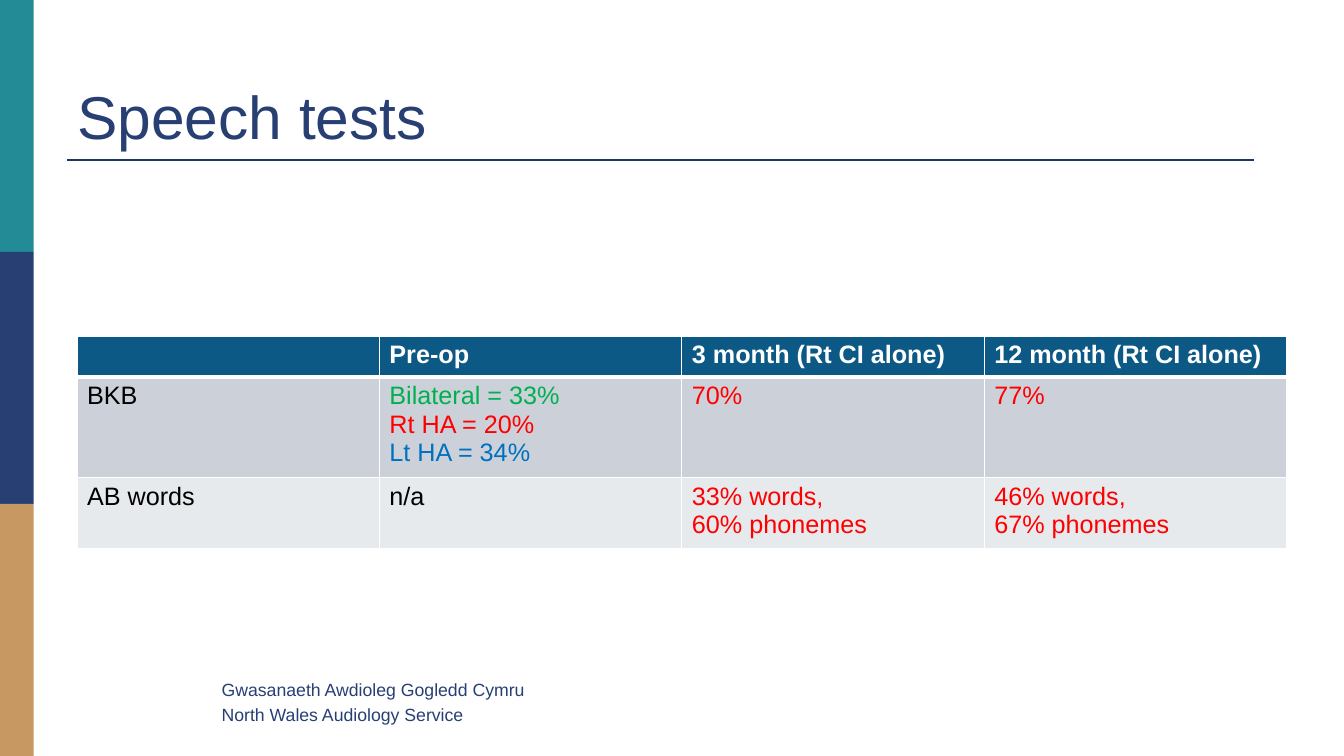
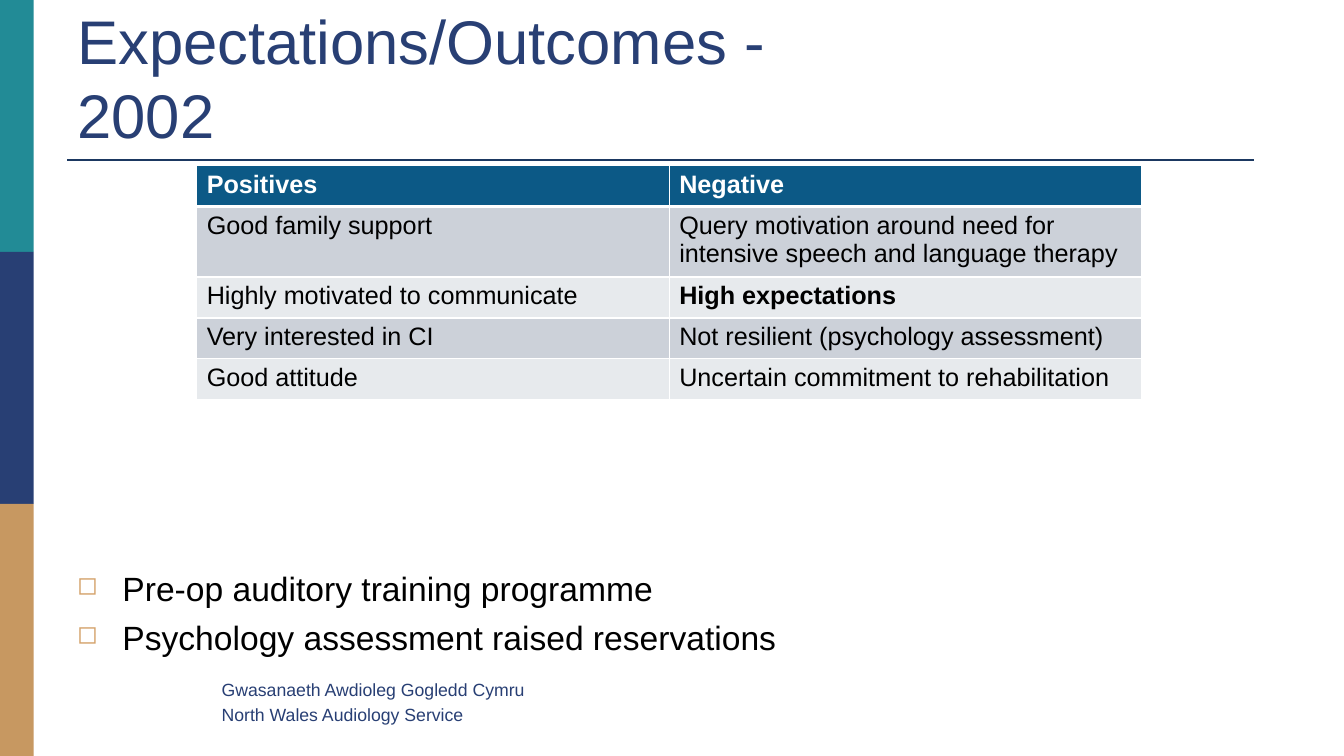
from dataclasses import dataclass

from lxml import etree
from pptx import Presentation
from pptx.dml import color
from pptx.enum import shapes, text
from pptx.oxml import ns
from pptx.util import Pt

FONT = "Arial"
TEAL, NAVY, SAND = "228B96", "283F74", "C79861"
RULE, BULLET = "1B3861", "D4A169"
WHITE, BLACK = "FFFFFF", "000000"
HEADER, ROW_DARK, ROW_LIGHT = "0C5986", "CCD1D9", "E7EAED"
GREEN, RED, BLUE = "00B050", "FF0000", "0070C0"
FOOTER = ("Gwasanaeth Awdioleg Gogledd Cymru", "North Wales Audiology Service")


@dataclass(frozen=True)
class Line:
    words: str
    colour: str = BLACK
    bold: bool = False


@dataclass(frozen=True)
class Grid:
    left: float
    top: float
    column_width: float
    headings: tuple[str, ...]
    rows: tuple[tuple[tuple[Line, ...], ...], ...]
    line_counts: tuple[int, ...]


def rgb(value: str) -> color.RGBColor:
    return color.RGBColor.from_string(value)


def add_run(paragraph, line: Line, size: float) -> None:
    run = paragraph.add_run()
    run.text = line.words
    run.font.name = FONT
    run.font.size = Pt(size)
    run.font.bold = line.bold
    run.font.color.rgb = rgb(line.colour)


def add_lines(frame, lines: tuple[Line, ...], size: float, gap: float = 0) -> None:
    for index, line in enumerate(lines):
        paragraph = frame.add_paragraph() if index else frame.paragraphs[0]
        if index and gap:
            paragraph.space_before = Pt(gap)
        add_run(paragraph, line, size)


def add_text_box(slide, left: float, top: float, width: float, height: float):
    frame = slide.shapes.add_textbox(Pt(left), Pt(top), Pt(width), Pt(height)).text_frame
    frame.word_wrap = True
    return frame


def add_frame(deck, heading: str, heading_size: float):
    slide = deck.slides.add_slide(deck.slide_layouts[5])
    for index, fill in enumerate((TEAL, NAVY, SAND)):
        band = slide.shapes.add_shape(
            shapes.MSO_SHAPE.RECTANGLE, 0, Pt(180 * index), Pt(24), Pt(180))
        band.shadow.inherit = False
        band.fill.solid()
        band.fill.fore_color.rgb = rgb(fill)
        band.line.fill.background()

    rule = slide.shapes.add_connector(
        shapes.MSO_CONNECTOR.STRAIGHT, Pt(48), Pt(114), Pt(896), Pt(114))
    rule.line.color.rgb = rgb(RULE)
    rule.line.width = Pt(1.5)
    etree.SubElement(rule._element.spPr, ns.qn("a:effectLst"))

    footer = add_text_box(slide, 151.2, 481, 372, 40)
    add_lines(footer, tuple(Line(words, NAVY) for words in FOOTER), 12.6, 3.4)

    title = slide.shapes.title
    title.left, title.top, title.width, title.height = Pt(48), Pt(21.6), Pt(612), Pt(90)
    frame = title.text_frame
    frame.auto_size = text.MSO_AUTO_SIZE.NONE
    frame.word_wrap = True
    frame.vertical_anchor = text.MSO_ANCHOR.BOTTOM
    frame.paragraphs[0].alignment = text.PP_ALIGN.LEFT
    add_run(frame.paragraphs[0], Line(heading, NAVY), heading_size)
    return slide


def add_borders(cell, top: float, bottom: float) -> None:
    properties = cell._tc.get_or_add_tcPr()
    for side, width in (("L", 1), ("R", 1), ("T", top), ("B", bottom)):
        border = etree.SubElement(properties, ns.qn(f"a:ln{side}"), w=str(Pt(width)))
        fill = etree.SubElement(border, ns.qn("a:solidFill"))
        etree.SubElement(fill, ns.qn("a:srgbClr"), val=WHITE)


def add_grid(slide, grid: Grid) -> None:
    heading_row = tuple(
        (Line(words, WHITE, True),) if words else () for words in grid.headings)
    heights = [max(29.2, 7.2 + 20 * count) for count in grid.line_counts]
    columns = len(grid.headings)
    table = slide.shapes.add_table(
        len(heights), columns, Pt(grid.left), Pt(grid.top),
        Pt(grid.column_width * columns), Pt(sum(heights))).table
    for column in table.columns:
        column.width = Pt(grid.column_width)
    for r, entries in enumerate((heading_row, *grid.rows)):
        table.rows[r].height = Pt(heights[r])
        fill = HEADER if r == 0 else ROW_DARK if r % 2 else ROW_LIGHT
        for c, lines in enumerate(entries):
            cell = table.cell(r, c)
            add_borders(cell, 3 if r == 1 else 1, 3 if r == 0 else 1)
            cell.fill.solid()
            cell.fill.fore_color.rgb = rgb(fill)
            add_lines(cell.text_frame, lines, 18)


def add_bullets(slide, points: tuple[str, ...]) -> None:
    frame = add_text_box(slide, 48, 402, 864, 72)
    add_lines(frame, tuple(Line(point) for point in points), 24, 6)
    for paragraph in frame.paragraphs:
        properties = paragraph._p.get_or_add_pPr()
        properties.set("marL", str(Pt(32.4)))
        properties.set("indent", str(-Pt(32.4)))
        tint = etree.SubElement(properties, ns.qn("a:buClr"))
        etree.SubElement(tint, ns.qn("a:srgbClr"), val=BULLET)
        etree.SubElement(properties, ns.qn("a:buSzPct"), val="75000")
        etree.SubElement(properties, ns.qn("a:buChar"), char="◻")


SPEECH_SCORES = Grid(
    55, 240, 216,
    ("", "Pre-op", "3 month (Rt CI alone)", "12 month (Rt CI alone)"),
    (
        (
            (Line("BKB"),),
            (Line("Bilateral = 33%", GREEN), Line("Rt HA = 20%", RED),
             Line("Lt HA = 34%", BLUE)),
            (Line("70%", RED),),
            (Line("77%", RED),),
        ),
        (
            (Line("AB words"),),
            (Line("n/a"),),
            (Line("33% words,", RED), Line("60% phonemes", RED)),
            (Line("46% words,", RED), Line("67% phonemes", RED)),
        ),
    ),
    (1, 3, 2),
)

EXPECTATIONS = Grid(
    140.5, 118.3, 337.5,
    ("Positives", "Negative"),
    (
        ((Line("Good family support"),),
         (Line("Query motivation around need for intensive speech and language therapy"),)),
        ((Line("Highly motivated to communicate"),),
         (Line("High expectations", bold=True),)),
        ((Line("Very interested in CI"),),
         (Line("Not resilient (psychology assessment)"),)),
        ((Line("Good attitude"),),
         (Line("Uncertain commitment to rehabilitation"),)),
    ),
    (1, 2, 1, 1, 1),
)


def main() -> None:
    deck = Presentation()
    deck.slide_width, deck.slide_height = Pt(960), Pt(540)

    speech = add_frame(deck, "Speech tests", 43.2)
    add_grid(speech, SPEECH_SCORES)

    outcomes = add_frame(deck, "Expectations/Outcomes - 2002", 44)
    add_grid(outcomes, EXPECTATIONS)
    add_bullets(outcomes, (
        "Pre-op auditory training programme",
        "Psychology assessment raised reservations",
    ))

    deck.save("out.pptx")


if __name__ == "__main__":
    main()
